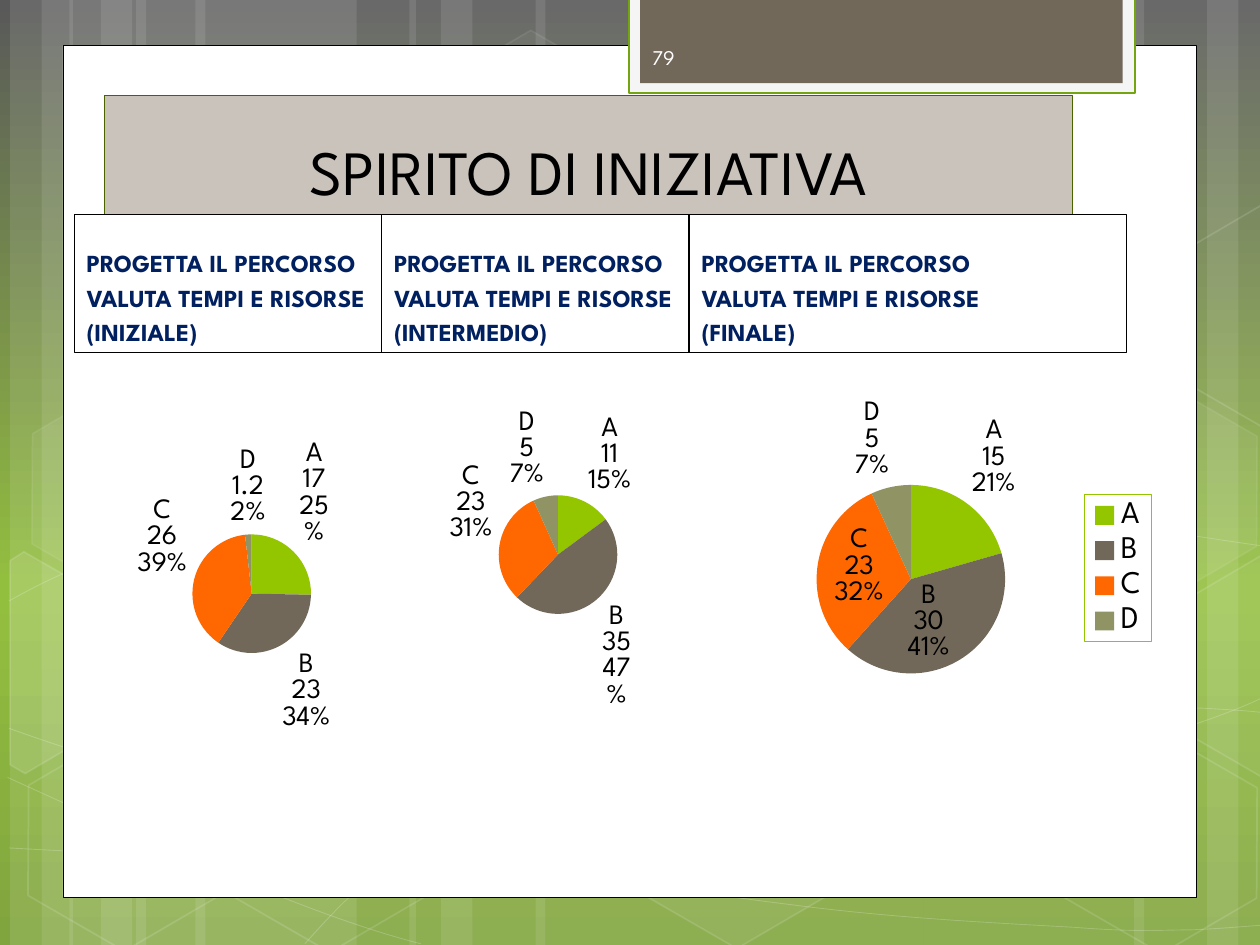
from copy import deepcopy
from dataclasses import dataclass
from pptx import Presentation
from pptx import util as u
from pptx.chart.data import CategoryChartData
from pptx.dml.color import RGBColor
from pptx.enum import chart as ch, shapes, text
from pptx.oxml import parse_xml
from pptx.oxml.ns import nsdecls, qn


@dataclass
class Theme:
    font: str = "League Spartan"
    black: str = "000000"
    white: str = "FFFFFF"
    navy: str = "002060"
    green: str = "94C600"
    frame: str = "74A510"
    title_fill: str = "C9C3BB"
    title_line: str = "4A6300"
    tab: str = "71685A"
    tab_edge: str = "F5F5F5"
    number: str = "FEFEFE"
    slices: tuple = ("94C600", "71685A", "FF6700", "909465")
    sky: tuple = ((0, "595959"), (0.62, "93BF3F"), (1, "81A53E"))
    title: int = 36
    legend: int = 18
    label: int = 16
    head: int = 14
    small: int = 12


T = Theme()
TITLE = "SPIRITO DI INIZIATIVA"
NUMBER = "79"
HEADING = ["PROGETTA IL PERCORSO", "VALUTA TEMPI E RISORSE"]
CATEGORIES = ["A", "B", "C", "D"]
# stage, values, left, heading width, chart width
COLUMNS = [
    ("(INIZIALE)", (17, 23, 26, 1.2), 0.59, 2.44, 2.44),
    ("(INTERMEDIO)", (11, 35, 23, 5), 3.03, 2.44, 2.44),
    ("(FINALE)", (15, 30, 23, 5), 5.47, 3.47, 3.75),
]
STRIPES = [(1.08, 1.75), (0.08, 0.5), (0.33, 0.83), (1.55, 1.75), (0.55, 0.5), (0.8, 0.83),
           (7.33, 1.75), (9.58, 0.5), (9, 0.83), (4.25, 3.08), (3.25, 0.5), (3.5, 0.83)]
CURVES = [
    [(0.07, 6.73), (0.61, 6.76), (1.15, 6.79), (1.9, 6.78), (2.65, 6.77), (3.58, 6.75), (4.58, 6.65),
     (5.58, 6.55), (7, 6.36), (7.92, 6.17), (8.83, 5.98), (9.77, 5.68), (10.07, 5.51)],
    [(0.07, 4.77), (0.36, 4.61), (0.65, 4.46), (1.21, 4.31), (1.78, 4.16), (2.59, 3.94), (3.47, 3.87),
     (4.36, 3.8), (5.44, 3.79), (6.54, 3.87), (7.64, 3.95), (9.47, 4.26), (10.07, 4.34)],
    [(0.06, 6.17), (1.27, 6.72), (2.47, 7.27), (3.34, 7.49)],
    [(0.07, 5.78), (0.38, 5.89), (0.7, 6), (1.28, 6.16), (1.86, 6.31), (2.73, 6.56), (3.57, 6.73),
     (4.4, 6.9), (5.45, 7.08), (6.28, 7.18), (7.11, 7.29), (8, 7.33), (8.53, 7.36),
     (9.05, 7.4), (9.19, 7.38), (9.45, 7.38), (9.71, 7.37), (9.89, 7.35), (10.07, 7.34)],
    [(2.42, 7.49), (2.6, 7.29), (2.78, 7.09), (3.02, 6.91), (3.26, 6.73), (3.6, 6.53), (3.88, 6.39),
     (4.16, 6.25), (4.33, 6.19), (4.7, 6.09), (5.06, 5.99), (5.73, 5.85), (6.08, 5.78),
     (6.44, 5.71), (6.49, 5.71), (6.8, 5.69), (7.11, 5.66), (7.6, 5.63), (7.94, 5.62),
     (8.29, 5.61), (8.86, 5.62), (8.86, 5.62), (9.08, 5.62), (9.31, 5.62), (9.53, 5.62),
     (9.71, 5.63), (9.88, 5.64), (9.97, 5.65), (10.06, 5.66), (10.03, 5.65), (10.06, 5.66)],
]
# left, top, fill opacity, line opacity
HEXAGONS = [(3.34, 0.36, 4, 8), (4.97, 5.89, 6, 12), (0.11, 5.91, 0, 12), (0.14, 3.12, 7, 8),
            (1.74, 5.92, 0, 12), (7.53, 4.53, 10, 12), (8.34, 5.93, 0, 12), (8.34, 3.14, 7, 8)]
CUT_HEXAGONS = [
    ([(0.08, 4.45), (0.19, 4.38), (0.96, 4.82), (0.95, 5.7), (0.2, 6.14), (0.08, 6.07)], 10),
    ([(9.26, 4.85), (10.01, 4.41), (10.09, 4.46), (10.09, 6.13), (10.02, 6.17), (9.26, 5.73)], 4),
    ([(9.26, 2.07), (10.01, 1.63), (10.1, 1.68), (10.09, 3.35), (10.02, 3.39), (9.26, 2.95)], 0),
]


def inches(*values):
    return [u.Inches(v) for v in values]


def paint(fill, color, opacity=100):
    if not color or not opacity:
        fill.background()
        return
    fill.solid()
    fill.fore_color.rgb = RGBColor.from_string(color)
    if opacity < 100:
        clr = fill._xPr.find(".//" + qn("a:srgbClr"))
        clr.append(parse_xml(f'<a:alpha {nsdecls("a")} val="{opacity * 1000}"/>'))


def style(sp, fill=None, line=None, width=1, fill_op=100, line_op=100):
    sp.shadow.inherit = False
    paint(sp.fill, fill, fill_op)
    paint(sp.line.fill, line, line_op)
    if line:
        sp.line.width = u.Pt(width)
    return sp


def box(s, at, kind=shapes.MSO_SHAPE.RECTANGLE, **look):
    return style(s.shapes.add_shape(kind, *inches(*at)), **look)


def outline(s, points, close, **look):
    fb = s.shapes.build_freeform(*inches(*points[0]))
    fb.add_line_segments([inches(*pt) for pt in points[1:]], close=close)
    return style(fb.convert_to_shape(), **look)


def bend(sp):
    route = sp._element.find(".//" + qn("a:path"))
    segments = route.findall(qn("a:lnTo"))
    for i in range(0, len(segments), 3):
        curve = parse_xml(f'<a:cubicBezTo {nsdecls("a")}/>')
        for segment in segments[i:i + 3]:
            curve.append(segment[0])
            route.remove(segment)
        route.append(curve)


def set_font(font, size, color, bold=False):
    font.name, font.size, font.bold = T.font, u.Pt(size), bold
    font.color.rgb = RGBColor.from_string(color)


def write(sp, lines, size, color, anchor, align=text.PP_ALIGN.LEFT, bold=False, before=0):
    tf = sp.text_frame
    tf.word_wrap, tf.auto_size, tf.vertical_anchor = True, text.MSO_AUTO_SIZE.NONE, anchor
    for i, line in enumerate(lines):
        p = tf.paragraphs[0] if i == 0 else tf.add_paragraph()
        p.text, p.alignment, p.space_before = line, align, u.Pt(before)
        set_font(p.font, size, color, bold)


def add_pie(s, values, at, legend):
    data = CategoryChartData()
    data.categories = CATEGORIES
    data.add_series("Series 1", values)
    chart = s.shapes.add_chart(ch.XL_CHART_TYPE.PIE, *inches(*at), data).chart
    chart.has_title = False
    set_font(chart.font, T.legend, T.black)
    plot = chart.plots[0]
    plot.vary_by_categories = True
    for i, color in enumerate(T.slices):
        paint(plot.series[0].points[i].format.fill, color)
    plot.has_data_labels = True
    labels = plot.data_labels
    labels.show_category_name = labels.show_value = labels.show_percentage = True
    labels.position = ch.XL_LABEL_POSITION.BEST_FIT
    set_font(labels.font, T.label, T.black)
    sep = parse_xml(f'<c:separator {nsdecls("c")}>\n</c:separator>')
    labels._element.find(qn("c:showBubbleSize")).addnext(sep)
    chart.has_legend = legend
    if legend:
        chart.legend.position = ch.XL_LEGEND_POSITION.RIGHT
        chart.legend.include_in_layout = False
        set_font(chart.legend.font, T.legend, T.black)
        chart.legend._element.find(qn("c:txPr")).addprevious(parse_xml(
            f'<c:spPr {nsdecls("c", "a")}><a:noFill/><a:ln w="9525"><a:solidFill>'
            f'<a:srgbClr val="{T.green}"/></a:solidFill></a:ln></c:spPr>'))


def add_background(s):
    fill = s.background.fill
    fill.gradient()
    fill.gradient_angle = 270
    stops = s.element.find(".//" + qn("a:gsLst"))
    stops.append(deepcopy(stops[0]))
    for stop, (position, color) in zip(fill.gradient_stops, T.sky):
        stop.position, stop.color.rgb = position, RGBColor.from_string(color)
    for left, width in STRIPES:
        box(s, (left, 0, width, 7.5), fill=T.white, fill_op=10)
    for knots in CURVES:
        bend(outline(s, knots, False, line=T.white, width=0.5, line_op=20))
    for left, top, fill_op, line_op in HEXAGONS:
        sp = box(s, (left, top, 1.75, 1.52), shapes.MSO_SHAPE.HEXAGON,
                 fill=T.white, line=T.white, fill_op=fill_op, line_op=line_op)
        sp.adjustments[0], sp.rotation = 0.285, 30
    for points, fill_op in CUT_HEXAGONS:
        outline(s, points, True, fill=T.white, line=T.white, fill_op=fill_op, line_op=12)


prs = Presentation()
prs.slide_width, prs.slide_height = inches(10, 7.5)
s = prs.slides.add_slide(prs.slide_layouts[5])
add_background(s)
box(s, (0.5, 0.36, 9, 6.76), fill=T.white, line=T.black, width=0.5)
box(s, (4.99, -0.02, 4.02, 0.76), fill=T.tab_edge, line=T.frame, width=1.25)
box(s, (5.08, -0.02, 3.83, 0.68), fill=T.tab)

title = s.shapes.title
s.shapes._spTree.append(title._element)
title.left, title.top, title.width, title.height = inches(0.83, 0.76, 7.68, 0.94)
style(title, fill=T.title_fill, line=T.title_line, width=0.75)
write(title, [TITLE], T.title, T.black, text.MSO_ANCHOR.BOTTOM, text.PP_ALIGN.CENTER)

number = s.shapes.add_textbox(*inches(5.08, 0.25, 1.46, 0.4))
write(number, [NUMBER], T.small, T.number, text.MSO_ANCHOR.MIDDLE)

for stage, values, left, head_width, chart_width in COLUMNS:
    head = box(s, (left, 1.7, head_width, 1.1), line=T.black, width=0.75)
    write(head, HEADING + [stage], T.head, T.navy, text.MSO_ANCHOR.BOTTOM, bold=True, before=0.2 * T.head)
    add_pie(s, values, (left, 2.96, chart_width, 3.1), legend=stage == COLUMNS[-1][0])

prs.save("out.pptx")
